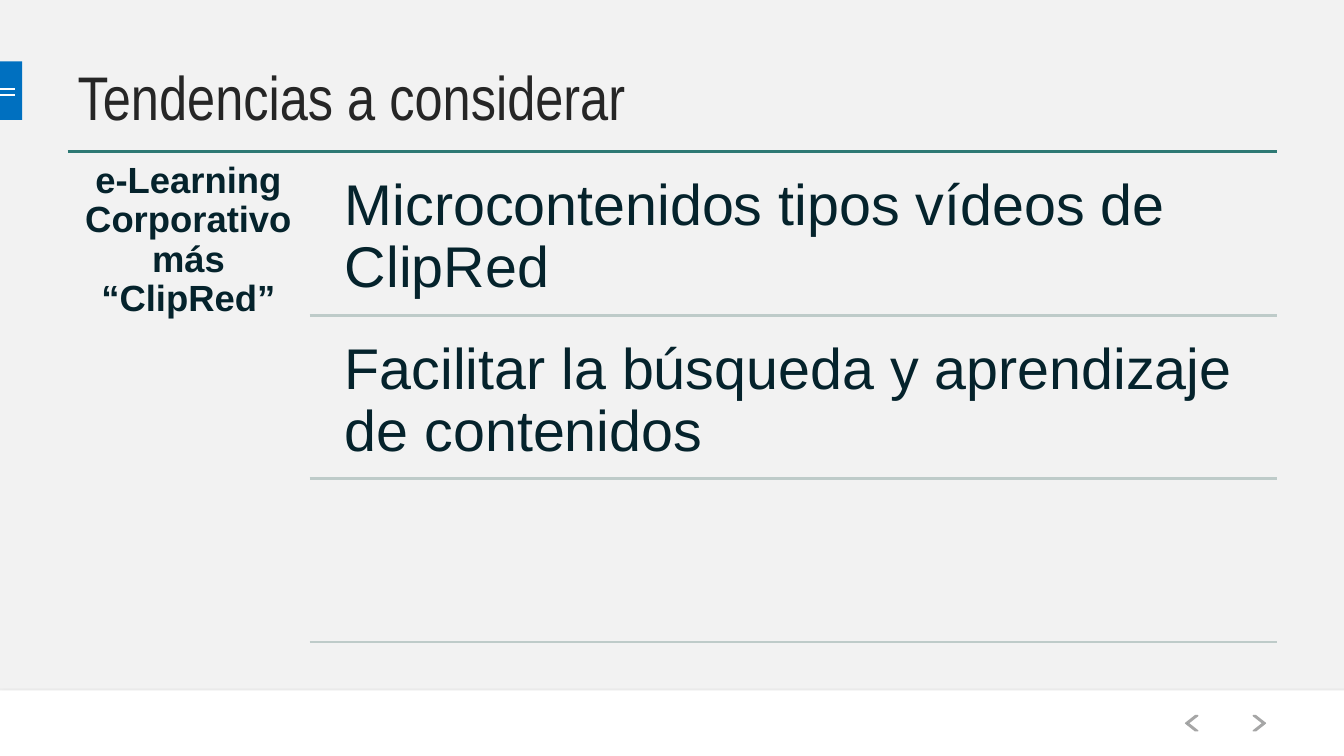
from lxml.etree import SubElement
from pptx import Presentation
from pptx.dml.color import RGBColor
from pptx.enum.shapes import MSO_CONNECTOR, MSO_SHAPE
from pptx.enum.text import MSO_ANCHOR, MSO_AUTO_SIZE, PP_ALIGN
from pptx.oxml.ns import qn
from pptx.util import Inches, Pt


def rule(x1, x2, y, color, width):
    line = slide.shapes.add_connector(
        MSO_CONNECTOR.STRAIGHT, Inches(x1), Inches(y), Inches(x2), Inches(y))
    line.line.color.rgb = RGBColor.from_string(color)
    line.line.width = Pt(width)
    SubElement(line._element.spPr, qn("a:effectLst"))


def write(frame, text, font, size, color, inset, bold=False, align=PP_ALIGN.LEFT):
    frame.word_wrap = True
    frame.auto_size = MSO_AUTO_SIZE.NONE
    frame.margin_left = frame.margin_right = Inches(inset)
    frame.margin_top = frame.margin_bottom = Inches(inset)
    paragraph = frame.paragraphs[0]
    paragraph.alignment = align
    run = paragraph.add_run()
    run.text = text
    run.font.name = font
    run.font.size = Pt(size)
    run.font.bold = bold
    run.font.color.rgb = RGBColor.from_string(color)
    return paragraph


prs = Presentation()
prs.slide_width = Inches(13.33)
prs.slide_height = Inches(7.5)
slide = prs.slides.add_slide(prs.slide_layouts[5])
slide.background.fill.solid()
slide.background.fill.fore_color.rgb = RGBColor.from_string("F2F2F2")

for left, top, width, height, color in [
    (0, 0.61, 0.22, 0.58, "0070C0"),
    (0, 6.85, 13.33, 0.65, "FFFFFF"),
]:
    band = slide.shapes.add_shape(
        MSO_SHAPE.RECTANGLE, Inches(left), Inches(top), Inches(width), Inches(height))
    band.shadow.inherit = False
    band.fill.solid()
    band.fill.fore_color.rgb = RGBColor.from_string(color)
    band.line.fill.background()

footer_effects = band._element.spPr.find(qn("a:effectLst"))
footer_shadow = SubElement(
    footer_effects, qn("a:outerShdw"), blurRad=str(Pt(3.1)), dist=str(Pt(1.8)),
    dir="5400000", rotWithShape="0")
shadow_color = SubElement(footer_shadow, qn("a:srgbClr"), val="808080")
SubElement(shadow_color, qn("a:alpha"), val="35000")

for y in (0.88, 0.94):
    rule(0, 0.15, y, "FFFFFF", 1.5)

for left, flipped in [(11.76, True), (12.43, False)]:
    arrow = slide.shapes.add_shape(
        MSO_SHAPE.CHEVRON, Inches(left), Inches(7.1), Inches(0.12), Inches(0.15))
    arrow.adjustments[0] = 0.793
    arrow.shadow.inherit = False
    arrow.fill.solid()
    arrow.fill.fore_color.rgb = RGBColor.from_string("2E7974")
    arrow.line.color.rgb = RGBColor.from_string("A6A6A6")
    arrow.line.width = Pt(1)
    if flipped:
        arrow._element.spPr.find(qn("a:xfrm")).set("flipH", "1")

title = slide.shapes.title
title.left, title.top = Inches(0.67), Inches(0.64)
title.width, title.height = Inches(11.11), Inches(0.62)
write(title.text_frame, "Tendencias a considerar", "Arial Narrow", 44, "262626", 0.1)
title.text_frame.margin_top = title.text_frame.margin_bottom = Inches(0.05)
title.text_frame.vertical_anchor = MSO_ANCHOR.MIDDLE

rule(0.67, 12.67, 1.5, "2E7974", 2)
topic = slide.shapes.add_textbox(Inches(0.67), Inches(1.5), Inches(2.4), Inches(4.95))
topic_text = write(topic.text_frame, "e-Learning Corporativo más “ClipRed”",
                   "Arial", 26, "05232C", 0.11, True, PP_ALIGN.CENTER)
topic_text.line_spacing = 0.9

trends = [
    "Microcontenidos tipos vídeos de ClipRed",
    "Facilitar la búsqueda y aprendizaje de contenidos",
    None,
]
for row, trend in enumerate(trends):
    top = 1.58 + row * 1.62
    if trend:
        box = slide.shapes.add_textbox(Inches(3.25), Inches(top), Inches(9.42), Inches(1.55))
        trend_text = write(box.text_frame, trend, "Arial", 41, "05232C", 0.17)
        trend_text.line_spacing = 0.9
    rule(3.07, 12.67, top + 1.55, "BECBC9", 2)

prs.save("out.pptx")
